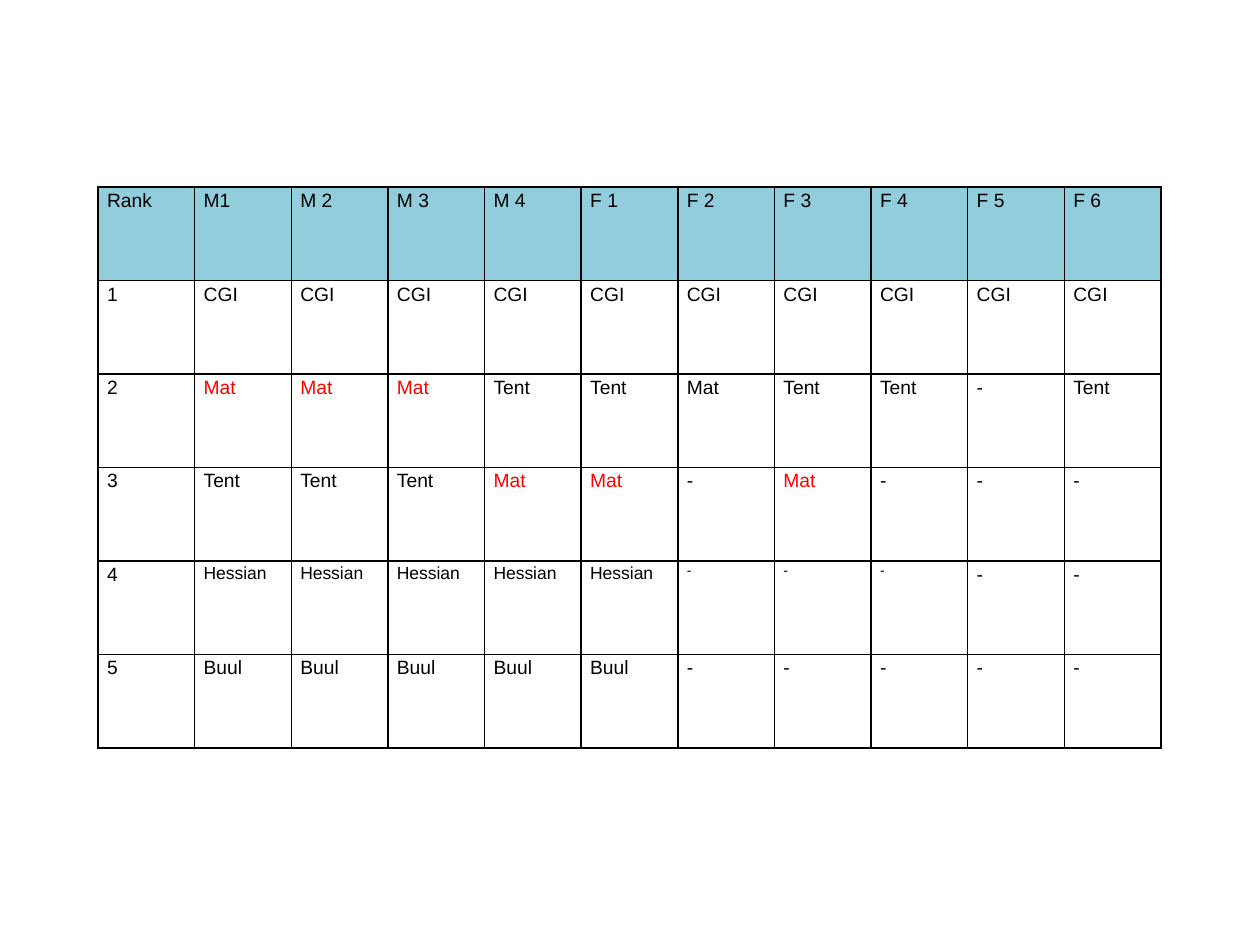
from dataclasses import dataclass

from pptx import Presentation
from pptx.dml.color import RGBColor as Rgb
from pptx.enum.text import PP_ALIGN as Align
from pptx.oxml import parse_xml
from pptx.oxml.ns import nsdecls
from pptx.util import Pt

SCALE = 914400 // 126


@dataclass(frozen=True)
class Theme:
    font: str = "Arial"
    ink: str = "000000"
    red: str = "FF0000"
    head: str = "92CDDC"
    base: int = 11
    mid: int = 10
    small: int = 8


THEME = Theme()

ROWS = [
    ["Rank", "M1", "M 2", "M 3", "M 4", "F 1", "F 2", "F 3", "F 4", "F 5", "F 6"],
    ["1"] + ["CGI"] * 10,
    ["2"] + ["Mat"] * 3 + ["Tent", "Tent", "Mat", "Tent", "Tent", "-", "Tent"],
    ["3"] + ["Tent"] * 3 + ["Mat ", "Mat ", "-", "Mat ", "-", "-", "-"],
    ["4"] + ["Hessian"] * 5 + ["-"] * 5,
    ["5"] + ["Buul"] * 5 + ["-"] * 5,
]
REDS = {(2, 1), (2, 2), (2, 3), (3, 4), (3, 5), (3, 7)}
SIZES = {(4, col): THEME.mid for col in range(1, 6)}
SIZES.update({(4, col): THEME.small for col in range(6, 9)})


def px(count):
    return count * SCALE


def add_edges(cell):
    props = cell._tc.get_or_add_tcPr()
    for spot, side in enumerate("LRTB"):
        line = parse_xml(
            f'<a:ln{side} {nsdecls("a")} w="{Pt(1)}"><a:solidFill>'
            f'<a:srgbClr val="{THEME.ink}"/></a:solidFill></a:ln{side}>'
        )
        props.insert(spot, line)


def add_text(cell, text, size, color):
    cell.margin_left = cell.margin_right = px(9)
    cell.margin_top = cell.margin_bottom = 0
    para = cell.text_frame.paragraphs[0]
    para.alignment = Align.JUSTIFY
    para.line_spacing = 1.15
    para.space_after = Pt(13.2)
    run = para.add_run()
    run.text = text
    font = run.font
    font.name = THEME.font
    font.size = Pt(size)
    font.bold = False
    font.color.rgb = Rgb.from_string(color)


def set_fill(cell, color):
    if color:
        cell.fill.solid()
        cell.fill.fore_color.rgb = Rgb.from_string(color)
    else:
        cell.fill.background()


def add_grid(slide, rows, left, top, width, height):
    frame = slide.shapes.add_table(
        len(rows), len(rows[0]), px(left), px(top), px(width), px(height)
    )
    table = frame.table
    table.first_row = table.horz_banding = False
    for row, texts in enumerate(rows):
        for col, text in enumerate(texts):
            cell = table.cell(row, col)
            spot = (row, col)
            color = THEME.red if spot in REDS else THEME.ink
            add_text(cell, text, SIZES.get(spot, THEME.base), color)
            set_fill(cell, THEME.head if row == 0 else None)
            add_edges(cell)


def main():
    deck = Presentation()
    deck.slide_width, deck.slide_height = px(1260), px(945)
    slide = deck.slides.add_slide(deck.slide_layouts[6])
    add_grid(slide, ROWS, 98, 187, 1063, 561)
    deck.save("out.pptx")


if __name__ == "__main__":
    main()
